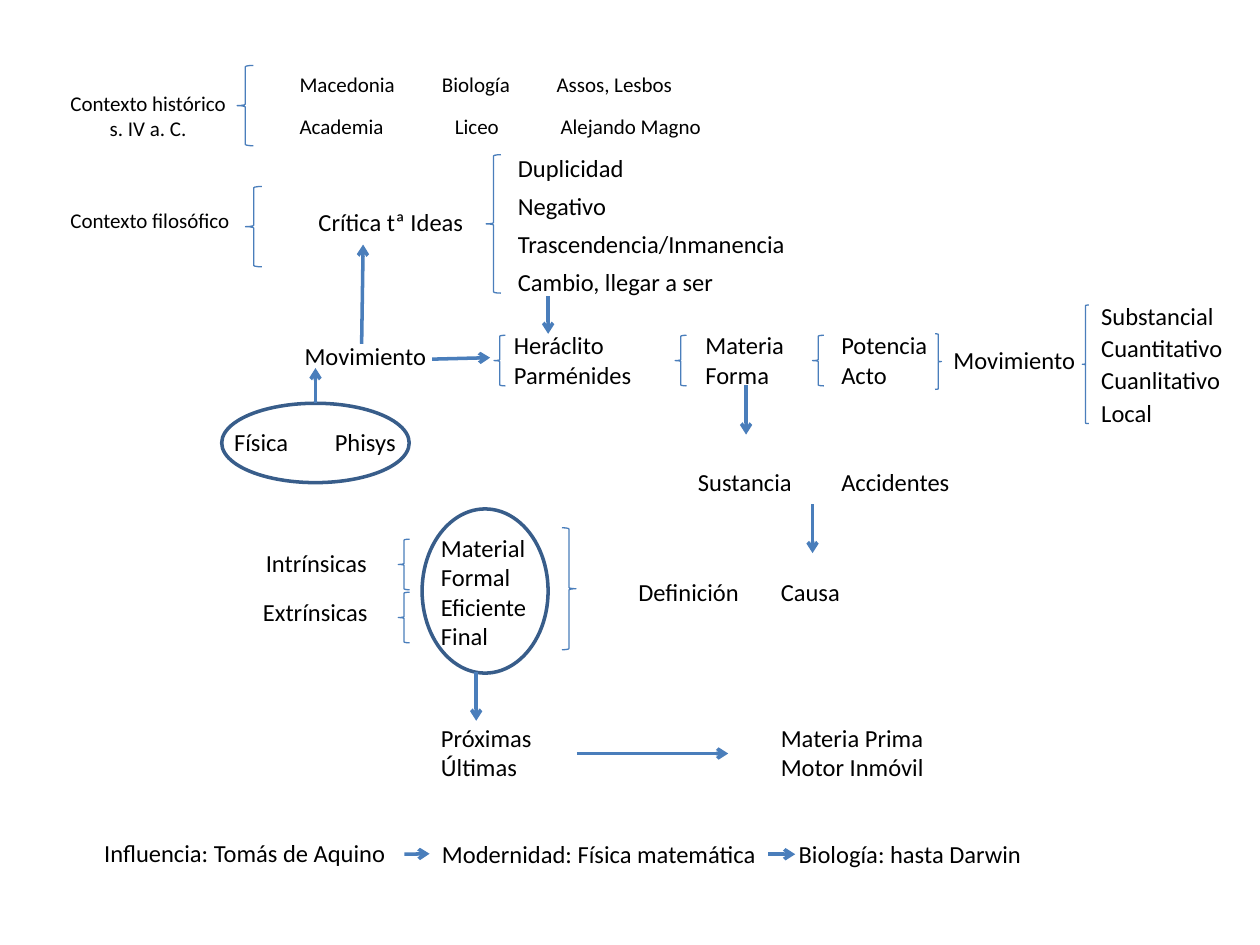
import pptx
import pptx.util
import pptx.dml.color
import pptx.enum.shapes
import pptx.enum.text
import pptx.oxml
import pptx.oxml.ns

Cm, Pt = pptx.util.Cm, pptx.util.Pt
Kind = pptx.enum.shapes.MSO_SHAPE
Rgb = pptx.dml.color.RGBColor.from_string


class Theme:
    font = "Calibri"
    ink = Rgb("000000")
    blue = Rgb("4A7EBB")
    navy = Rgb("385D8A")
    big, small = 14, 12
    thin, thick = Pt(0.75), Pt(2)


deck = pptx.Presentation()
deck.slide_width, deck.slide_height = Cm(25.4), Cm(19.05)
slide = deck.slides.add_slide(deck.slide_layouts[6])
shapes = slide.shapes


def label(text, left, top, width, size=Theme.big):
    """Add a text box whose height follows from its lines."""
    lines = text.count("\n") + 1
    high = 0.25 + lines * size * 0.0423
    box = shapes.add_textbox(Cm(left), Cm(top), Cm(width), Cm(high))
    frame = box.text_frame
    frame.text = text
    frame.word_wrap = False
    frame.auto_size = pptx.enum.text.MSO_AUTO_SIZE.SHAPE_TO_FIT_TEXT
    for para in frame.paragraphs:
        for run in para.runs:
            run.font.name = Theme.font
            run.font.size = Pt(size)
            run.font.color.rgb = Theme.ink
    return box


def outline(kind, left, top, width, height, color, weight):
    """Add an unfilled shape."""
    shape = shapes.add_shape(kind, Cm(left), Cm(top), Cm(width), Cm(height))
    shape.shadow.inherit = False
    shape.fill.background()
    shape.line.color.rgb = color
    shape.line.width = weight
    return shape


# Historical and philosophical context
past = label("Contexto histórico\ns. IV a. C.", 1.17, 1.7, 3.68, Theme.small)
past.text_frame.paragraphs[1].alignment = pptx.enum.text.PP_ALIGN.CENTER
for text, left, top, width in [
    ("Macedonia", 5.79, 1.32, 2.46),
    ("Biología", 8.66, 1.32, 1.91),
    ("Assos, Lesbos", 10.97, 1.32, 2.87),
    ("Academia", 5.79, 2.16, 2.24),
    ("Liceo", 8.92, 2.16, 1.42),
    ("Alejando Magno", 11.05, 2.16, 3.38),
    ("Contexto filosófico", 1.17, 4.06, 3.76),
]:
    label(text, left, top, width, Theme.small)

# Evenly spaced lists: critique of Ideas, kinds of movement
for left, top, step, items in [
    (10.19, 2.97, 0.76, [("Duplicidad", 2.67), ("Negativo", 2.31),
                         ("Trascendencia/Inmanencia", 5.94),
                         ("Cambio, llegar a ser", 4.5)]),
    (21.95, 5.94, 0.65, [("Substancial", 2.79), ("Cuantitativo", 3),
                         ("Cuanlitativo", 2.95), ("Local", 1.55)]),
]:
    for row, (text, width) in enumerate(items):
        label(text, left, top + row * step, width)

# Main concepts
for text, left, top, width in [
    ("Crítica tª Ideas", 6.17, 4.04, 3.58),
    ("Movimiento", 5.89, 6.76, 3),
    ("Física", 4.47, 8.48, 1.63),
    ("Phisys", 6.5, 8.48, 1.75),
    ("Heráclito\nParménides", 10.11, 6.53, 2.9),
    ("Materia\nForma", 13.97, 6.53, 2.11),
    ("Potencia\nActo", 16.71, 6.53, 2.26),
    ("Movimiento", 18.97, 6.83, 3),
    ("Sustancia", 13.82, 9.3, 2.41),
    ("Accidentes", 16.71, 9.3, 2.72),
    ("Definición", 12.62, 11.51, 2.57),
    ("Causa", 15.49, 11.51, 1.73),
    ("Material\nFormal\nEficiente\nFinal", 8.64, 10.62, 2.26),
    ("Intrínsicas", 5.11, 10.92, 2.57),
    ("Extrínsicas", 5.05, 11.91, 2.64),
    ("Próximas\nÚltimas", 8.64, 14.45, 2.36),
    ("Materia Prima\nMotor Inmóvil", 15.49, 14.45, 3.43),
    ("Influencia: Tomás de Aquino", 1.85, 16.76, 6.25),
    ("Biología: hasta Darwin", 15.85, 16.79, 5.05),
]:
    label(text, left, top, width)
modern = label("Modernidad: Física matemática", 8.66, 16.79, 6.91)

# Braces
for kind, spots in [
    (Kind.LEFT_BRACE, [
        (4.78, 1.32, 0.33, 1.62), (4.95, 3.76, 0.33, 1.62),
        (9.8, 3.12, 0.3, 2.79), (9.96, 6.76, 0.23, 1.02),
        (13.61, 6.76, 0.23, 1.02), (16.38, 6.76, 0.23, 1.02),
        (8.03, 10.87, 0.23, 1.02), (8.03, 11.94, 0.23, 1.02),
        (21.82, 6.15, 0.13, 2.39)]),
    (Kind.RIGHT_BRACE, [
        (11.33, 10.64, 0.28, 2.46), (18.85, 6.73, 0.13, 1.12)]),
]:
    for spot in spots:
        outline(kind, *spot, Theme.blue, Theme.thin)

# Ovals around nature and the four causes
nature = outline(Kind.OVAL, 4.47, 8.13, 3.78, 1.6, Theme.navy, Theme.thick)
outline(Kind.OVAL, 8.51, 10.26, 2.54, 3.31, Theme.navy, Theme.thick)

# Arrows: start, end, joined start, joined end
for x1, y1, x2, y2, start, end in [
    (6.36, 8.13, 6.36, 7.42, nature, None),
    (7.29, 6.93, 7.32, 4.93, None, None),
    (8.71, 7.24, 9.88, 7.21, None, None),
    (11.05, 5.97, 11.05, 6.73, None, None),
    (15.04, 7.77, 15.04, 8.76, None, None),
    (16.38, 10.16, 16.38, 11.15, None, None),
    (9.6, 13.54, 9.6, 14.53, None, None),
    (11.63, 15.19, 14.68, 15.19, None, None),
    (8.15, 17.22, 8.66, 17.22, None, modern),
    (15.49, 17.22, 16.03, 17.22, None, None),
]:
    arrow = shapes.add_connector(pptx.enum.shapes.MSO_CONNECTOR.STRAIGHT,
                                 Cm(x1), Cm(y1), Cm(x2), Cm(y2))
    if start:
        arrow.begin_connect(start, 0)
    if end:
        arrow.end_connect(end, 1)
    arrow.line.color.rgb = Theme.blue
    arrow.line.width = Theme.thick
    space = pptx.oxml.ns.nsdecls("a")
    line = arrow.line._get_or_add_ln()
    line.append(pptx.oxml.parse_xml(f'<a:tailEnd {space} type="arrow"/>'))
    line.getparent().append(pptx.oxml.parse_xml(f"<a:effectLst {space}/>"))

deck.save("out.pptx")
